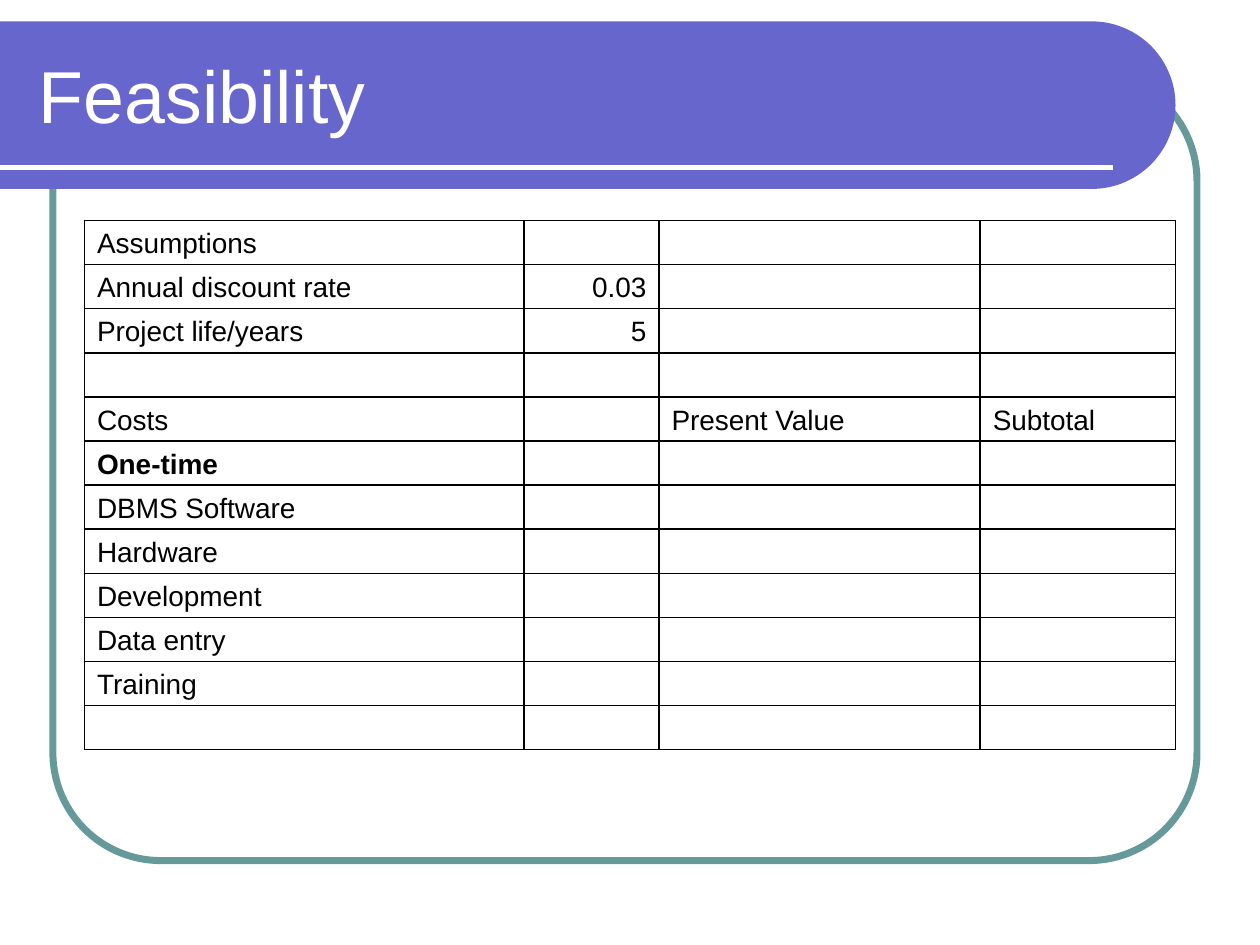
import math
from dataclasses import dataclass

from lxml import etree
from pptx import Presentation
from pptx.dml.color import RGBColor
from pptx.enum.shapes import MSO_CONNECTOR, MSO_SHAPE
from pptx.enum.text import MSO_ANCHOR, PP_ALIGN
from pptx.oxml.ns import qn
from pptx.util import Inches, Pt

ROUNDED = MSO_SHAPE.ROUNDED_RECTANGLE
STRAIGHT = MSO_CONNECTOR.STRAIGHT
MIDDLE, BOTTOM = MSO_ANCHOR.MIDDLE, MSO_ANCHOR.BOTTOM
LEFT, RIGHT = PP_ALIGN.LEFT, PP_ALIGN.RIGHT


@dataclass(frozen=True)
class Theme:
    font: str = "Arial"
    banner: str = "6666CC"
    frame: str = "669999"
    light: str = "FFFFFF"
    ink: str = "000000"
    title_size: int = 42
    body_size: int = 16


COLUMN_WIDTHS = [3.49, 1.07, 2.55, 1.55]
ROW_HEIGHT = 4.17 / 12
BOLD_LABELS = {"One-time"}
ROWS = [
    ["Assumptions"],
    ["Annual discount rate", "0.03"],
    ["Project life/years", "5"],
    [],
    ["Costs", "", "Present Value", "Subtotal"],
    ["One-time"],
    ["DBMS Software"],
    ["Hardware"],
    ["Development"],
    ["Data entry"],
    ["Training"],
    [],
]


def write(frame, text, *, font, size, color, bold=False, align=LEFT):
    paragraph = frame.paragraphs[0]
    paragraph.alignment = align
    run = paragraph.add_run()
    run.text = text
    run.font.name = font
    run.font.size = Pt(size)
    run.font.bold = bold
    run.font.color.rgb = RGBColor.from_string(color)


def set_borders(cell, color, width):
    properties = cell._tc.get_or_add_tcPr()
    for index, side in enumerate(("lnL", "lnR", "lnT", "lnB")):
        border = etree.Element(qn(f"a:{side}"), w=str(Pt(width)))
        fill = etree.SubElement(border, qn("a:solidFill"))
        etree.SubElement(fill, qn("a:srgbClr"), val=color)
        properties.insert(index, border)


class SlideBuilder:
    def __init__(self, slide, theme):
        self.slide = slide
        self.theme = theme

    def frame(self, left, top, width, height, corner):
        outline = self.slide.shapes.add_shape(
            ROUNDED, Inches(left), Inches(top), Inches(width), Inches(height))
        outline.adjustments[0] = corner
        outline.shadow.inherit = False
        outline.fill.background()
        outline.line.color.rgb = RGBColor.from_string(self.theme.frame)
        outline.line.width = Pt(4)

    def banner(self, top, width, height, steps=60):
        """Draw a band from the left slide edge that ends in a half circle."""
        radius = height / 2
        angles = [math.pi * (step / steps - 0.5) for step in range(steps + 1)]
        arc = [(Inches(width - radius + radius * math.cos(angle)),
                Inches(top + radius + radius * math.sin(angle)))
               for angle in angles]
        builder = self.slide.shapes.build_freeform(0, Inches(top))
        builder.add_line_segments(arc + [(0, Inches(top + height))], close=True)
        band = builder.convert_to_shape()
        band.shadow.inherit = False
        band.fill.solid()
        band.fill.fore_color.rgb = RGBColor.from_string(self.theme.banner)
        band.line.fill.background()

    def rule(self, y, length):
        line = self.slide.shapes.add_connector(
            STRAIGHT, 0, Inches(y), Inches(length), Inches(y))
        line.line.color.rgb = RGBColor.from_string(self.theme.light)
        line.line.width = Pt(3)
        etree.SubElement(line._element.spPr, qn("a:effectLst"))

    def title(self, text, left, top, width, height):
        box = self.slide.shapes.add_textbox(
            Inches(left), Inches(top), Inches(width), Inches(height))
        box.text_frame.word_wrap = True
        box.text_frame.vertical_anchor = MIDDLE
        write(box.text_frame, text, font=self.theme.font,
              size=self.theme.title_size, color=self.theme.light)

    def table(self, rows, left, top):
        table = self.slide.shapes.add_table(
            len(rows), len(COLUMN_WIDTHS), Inches(left), Inches(top),
            Inches(sum(COLUMN_WIDTHS)), Inches(ROW_HEIGHT * len(rows))).table
        table.first_row = table.horz_banding = False
        for column, width in zip(table.columns, COLUMN_WIDTHS):
            column.width = Inches(width)
        for row, values in zip(table.rows, rows):
            row.height = Inches(ROW_HEIGHT)
            padded = values + [""] * (len(COLUMN_WIDTHS) - len(values))
            for index, (cell, value) in enumerate(zip(row.cells, padded)):
                self.cell(cell, value, RIGHT if index == 1 else LEFT)

    def cell(self, cell, value, align):
        cell.fill.background()
        set_borders(cell, self.theme.ink, 1)
        cell.vertical_anchor = BOTTOM
        cell.margin_top, cell.margin_bottom = Inches(0.01), Inches(0.04)
        if value:
            write(cell.text_frame, value, font=self.theme.font,
                  size=self.theme.body_size, color=self.theme.ink,
                  bold=value in BOLD_LABELS, align=align)


def main():
    presentation = Presentation()
    presentation.slide_width = Inches(10)
    presentation.slide_height = Inches(7.5)
    slide = presentation.slides.add_slide(presentation.slide_layouts[6])
    builder = SlideBuilder(slide, Theme())
    builder.frame(0.42, 0.58, 9.08, 6.25, corner=0.137)
    builder.banner(top=0.17, width=9.33, height=1.33)
    builder.rule(y=1.33, length=8.83)
    builder.title("Feasibility", 0.21, 0.25, 8.77, 1)
    builder.table(ROWS, left=0.67, top=1.75)
    presentation.save("out.pptx")


if __name__ == "__main__":
    main()
